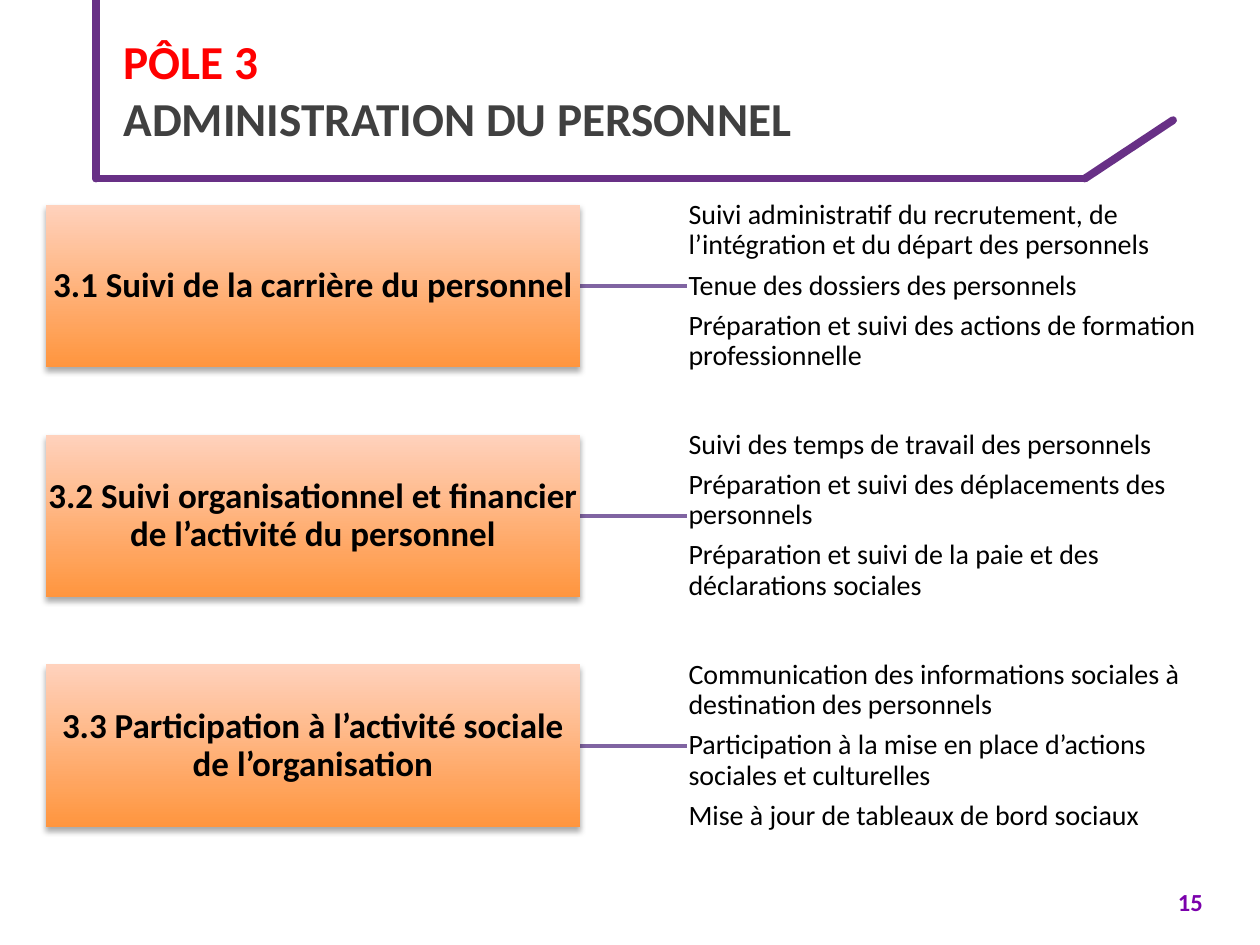
"""Build the slide presenting the three personnel administration activities."""
import pptx
import pptx.dml.color
import pptx.enum.shapes
import pptx.enum.text
import pptx.oxml
import pptx.oxml.ns
import pptx.util

Pt = pptx.util.Pt
ANCHOR = pptx.enum.text.MSO_ANCHOR
ALIGN = pptx.enum.text.PP_ALIGN
COLORS = {
    "frame": "683086",
    "link": "8064A2",
    "pole": "FF0000",
    "title": "404040",
    "number": "7B00AC",
    "text": "000000",
    "panel": "FFFFFF",
    "box_bottom": "FF953E",
    "box_top": "FFD2BD",
}
ACTIVITIES = [
    ("3.1 Suivi de la carrière du personnel", [
        "Suivi administratif du recrutement, de l’intégration et du départ des personnels",
        "Tenue des dossiers des personnels",
        "Préparation et suivi des actions de formation professionnelle",
    ]),
    ("3.2 Suivi organisationnel et financier de l’activité du personnel", [
        "Suivi des temps de travail des personnels",
        "Préparation et suivi des déplacements des personnels",
        "Préparation et suivi de la paie et des déclarations sociales",
    ]),
    ("3.3 Participation à l’activité sociale de l’organisation", [
        "Communication des informations sociales à destination des personnels",
        "Participation à la mise en place d’actions sociales et culturelles",
        "Mise à jour de tableaux de bord sociaux",
    ]),
]
BOX_LEFT, PANEL_LEFT, FIRST_TOP = 26.2, 392.7, 116.9
WIDTH, HEIGHT, PITCH = 305.3, 93, 131.4


def rgb(name):
    return pptx.dml.color.RGBColor.from_string(COLORS[name])


def add_text(paragraph, text, size=16, color="text", bold=False, align=ALIGN.LEFT,
             spacing=1.0, after=0):
    paragraph.alignment = align
    paragraph.line_spacing = spacing
    paragraph.space_before = Pt(0)
    paragraph.space_after = Pt(after)
    run = paragraph.add_run()
    run.text = text
    run.font.name = "Calibri"
    run.font.size = Pt(size)
    run.font.bold = bold
    run.font.color.rgb = rgb(color)


class SlideBuilder:
    def __init__(self, presentation):
        self.slide = presentation.slides.add_slide(presentation.slide_layouts[5])

    def line(self, start, end, color, width):
        connector = self.slide.shapes.add_connector(
            pptx.enum.shapes.MSO_CONNECTOR.STRAIGHT, *map(Pt, (*start, *end)))
        connector.line.color.rgb = rgb(color)
        connector.line.width = Pt(width)
        connector.line._get_or_add_ln().set("cap", "rnd" if color == "frame" else "flat")
        properties = connector._element.spPr
        properties.append(pptx.oxml.parse_xml(
            f'<a:effectLst {pptx.oxml.ns.nsdecls("a")}/>'))

    def title(self, pole, name):
        shape = self.slide.shapes.title
        shape.left, shape.top, shape.width, shape.height = map(Pt, (63.4, 0, 620.6, 101.5))
        frame = shape.text_frame
        frame.auto_size = pptx.enum.text.MSO_AUTO_SIZE.NONE
        frame.vertical_anchor = ANCHOR.MIDDLE
        paragraph = frame.paragraphs[0]
        add_text(paragraph, pole, size=27, color="pole", bold=True)
        paragraph.add_line_break()
        add_text(paragraph, name, size=27, color="title", bold=True)

    def number(self, text):
        shape = self.slide.shapes.add_textbox(*map(Pt, (666, 503.3, 48, 28.8)))
        shape.text_frame.word_wrap = True
        add_text(shape.text_frame.paragraphs[0], text, size=14, color="number", bold=True)

    def rectangle(self, left, top, texts, **text_format):
        shape = self.slide.shapes.add_shape(
            pptx.enum.shapes.MSO_SHAPE.RECTANGLE, *map(Pt, (left, top, WIDTH, HEIGHT)))
        shape.shadow.inherit = False
        shape.line.fill.background()
        frame = shape.text_frame
        frame.word_wrap = True
        frame.vertical_anchor = ANCHOR.MIDDLE
        frame.margin_left = frame.margin_right = Pt(0.8)
        frame.margin_top = frame.margin_bottom = Pt(0.8)
        for index, text in enumerate(texts):
            paragraph = frame.add_paragraph() if index else frame.paragraphs[0]
            add_text(paragraph, text, spacing=0.9, **text_format)
        return shape

    def box(self, top, text):
        shape = self.rectangle(BOX_LEFT, top, [text], size=20, bold=True,
                               align=ALIGN.CENTER, after=7)
        shape.fill.gradient()
        shape.fill.gradient_angle = 90
        for stop, color in zip(shape.fill.gradient_stops, ("box_bottom", "box_top")):
            stop.color.rgb = rgb(color)
        effects = shape._element.spPr.find(pptx.oxml.ns.qn("a:effectLst"))
        effects.append(pptx.oxml.parse_xml(
            f'<a:outerShdw {pptx.oxml.ns.nsdecls("a")} blurRad="{Pt(3.5)}" '
            f'dist="{Pt(2.2)}" dir="5400000" rotWithShape="0">'
            f'<a:srgbClr val="{COLORS["text"]}"><a:alpha val="32000"/></a:srgbClr>'
            '</a:outerShdw>'))

    def panel(self, top, texts):
        shape = self.rectangle(PANEL_LEFT, top, texts, after=5.6)
        shape.fill.solid()
        shape.fill.fore_color.rgb = rgb("panel")


def main():
    presentation = pptx.Presentation()
    presentation.slide_width, presentation.slide_height = Pt(720), Pt(540)
    builder = SlideBuilder(presentation)
    corners = [(54.9, 0), (54.9, 102), (620, 102), (670.3, 68.7)]
    for start, end in zip(corners, corners[1:]):
        builder.line(start, end, "frame", 4.5)
    builder.title("PÔLE 3", "ADMINISTRATION DU PERSONNEL")
    builder.number("15")
    for index, (name, tasks) in enumerate(ACTIVITIES):
        top = FIRST_TOP + index * PITCH
        middle = top + HEIGHT / 2
        builder.line((BOX_LEFT + WIDTH, middle), (PANEL_LEFT, middle), "link", 2)
        builder.box(top, name)
        builder.panel(top, tasks)
    presentation.save("out.pptx")


if __name__ == "__main__":
    main()
